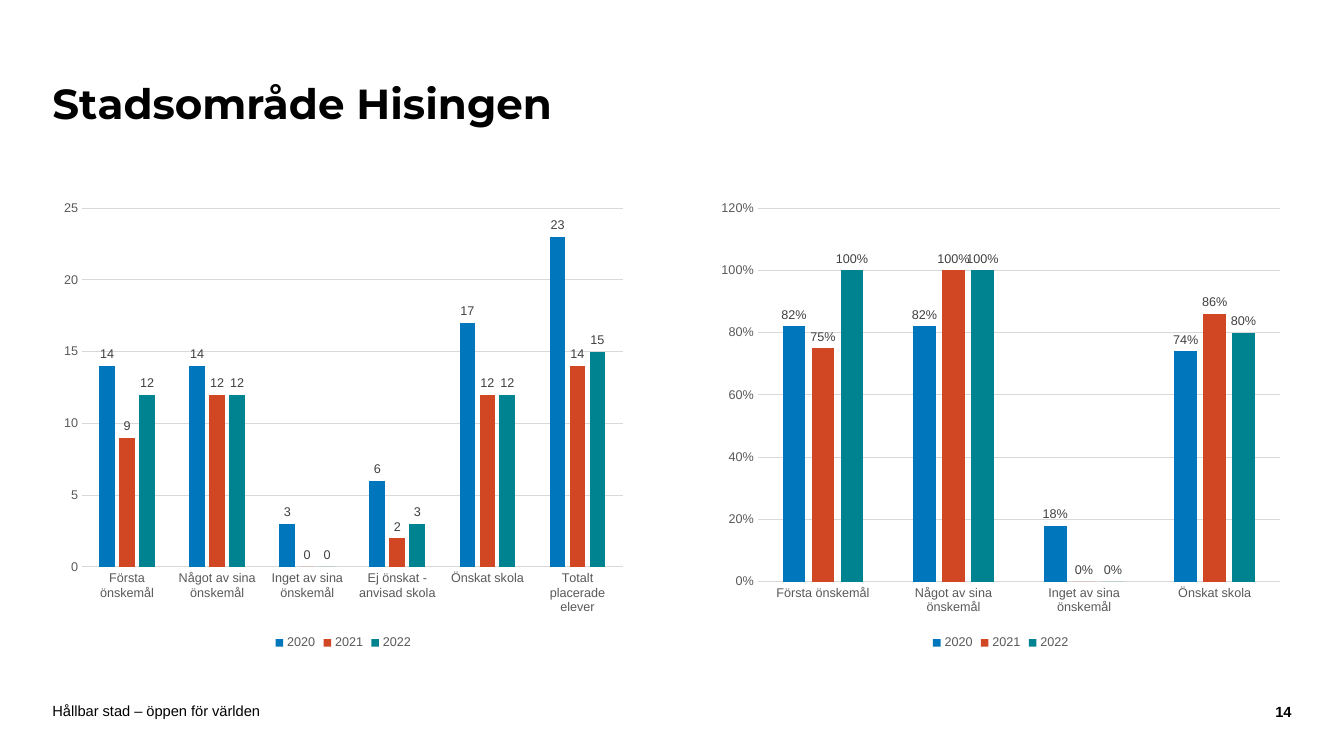
from dataclasses import dataclass

from pptx import Presentation
from pptx import util as u
from pptx.chart import data as chart_data
from pptx.dml import color
from pptx.enum import chart as charts, text


@dataclass(frozen=True)
class Theme:
    heading: str = "Montserrat"
    body: str = "Arial"
    ink: str = "000000"
    muted: str = "595959"
    label: str = "404040"
    rule: str = "D9D9D9"
    series: tuple = ("0077BC", "D24723", "008391")
    title_size: float = 30
    footer_size: float = 10.5
    chart_size: float = 10
    small_size: float = 9
    line_width: float = 0.75


THEME = Theme()
YEARS = ("2020", "2021", "2022")
MARGIN = 0.52
CONTENT_WIDTH = 12.29
CHART_WIDTH = 5.77
CHART_TOP, CHART_HEIGHT = 1.9, 4.59

PLACEMENT_COUNTS = {
    "Första önskemål": (14, 9, 12),
    "Något av sina önskemål": (14, 12, 12),
    "Inget av sina önskemål": (3, 0, 0),
    "Ej önskat - anvisad skola": (6, 2, 3),
    "Önskat skola": (17, 12, 12),
    "Totalt placerade elever": (23, 14, 15),
}
PLACEMENT_SHARES = {
    "Första önskemål": (0.82, 0.75, 1),
    "Något av sina önskemål": (0.82, 1, 1),
    "Inget av sina önskemål": (0.18, 0, 0),
    "Önskat skola": (0.74, 0.86, 0.8),
}


def rgb(value):
    return color.RGBColor.from_string(value)


def style_font(font, size, hue, name=THEME.body, bold=False):
    font.size = u.Pt(size)
    font.color.rgb = rgb(hue)
    font.name = name
    font.bold = bold


def style_line(line):
    line.color.rgb = rgb(THEME.rule)
    line.width = u.Pt(THEME.line_width)


def set_frame(frame, vertical_inset):
    frame.word_wrap = True
    frame.auto_size = text.MSO_AUTO_SIZE.NONE
    frame.vertical_anchor = text.MSO_ANCHOR.MIDDLE
    frame.margin_left = frame.margin_right = 0
    frame.margin_top = frame.margin_bottom = u.Inches(vertical_inset)


def add_title(slide, box, wording):
    title = slide.shapes.title
    title.left, title.top, title.width, title.height = map(u.Inches, box)
    set_frame(title.text_frame, 0.05)
    paragraph = title.text_frame.paragraphs[0]
    paragraph.text = wording
    paragraph.alignment = text.PP_ALIGN.LEFT
    paragraph.line_spacing = 0.9
    style_font(paragraph.font, THEME.title_size, THEME.ink, THEME.heading, True)


def add_footer_text(slide, box, wording, alignment, bold=False):
    shape = slide.shapes.add_textbox(*map(u.Inches, box))
    set_frame(shape.text_frame, 0)
    paragraph = shape.text_frame.paragraphs[0]
    paragraph.text = wording
    paragraph.alignment = alignment
    style_font(paragraph.font, THEME.footer_size, THEME.ink, bold=bold)


def add_footer(slide, box):
    left, top, width, height = box
    number_width = 0.64
    add_footer_text(slide, (left, top, 9.45, height),
                    "Hållbar stad – öppen för världen", text.PP_ALIGN.LEFT)
    add_footer_text(slide, (left + width - number_width, top + 0.01, number_width, height),
                    "14", text.PP_ALIGN.RIGHT, True)


def style_axes(chart, maximum, step, number_format):
    for axis in (chart.category_axis, chart.value_axis):
        axis.major_tick_mark = axis.minor_tick_mark = charts.XL_TICK_MARK.NONE
        style_font(axis.tick_labels.font, THEME.small_size, THEME.muted)
    style_line(chart.category_axis.format.line)
    value_axis = chart.value_axis
    value_axis.format.line.fill.background()
    value_axis.minimum_scale = 0
    value_axis.maximum_scale = maximum
    value_axis.major_unit = step
    value_axis.has_major_gridlines = True
    style_line(value_axis.major_gridlines.format.line)
    value_axis.tick_labels.number_format = number_format
    value_axis.tick_labels.number_format_is_linked = False


def style_series(series, hue, number_format):
    series.format.fill.solid()
    series.format.fill.fore_color.rgb = rgb(hue)
    series.invert_if_negative = False
    labels = series.data_labels
    labels.show_value = True
    labels.position = charts.XL_LABEL_POSITION.OUTSIDE_END
    labels.number_format = number_format
    labels.number_format_is_linked = False
    style_font(labels.font, THEME.small_size, THEME.label)


def add_column_chart(slide, box, rows, maximum, step, number_format):
    data = chart_data.CategoryChartData(number_format=number_format)
    data.categories = list(rows)
    for year, values in zip(YEARS, zip(*rows.values())):
        data.add_series(year, values)
    chart = slide.shapes.add_chart(
        charts.XL_CHART_TYPE.COLUMN_CLUSTERED, *map(u.Inches, box), data).chart
    style_font(chart.font, THEME.chart_size, THEME.ink)
    chart.has_title = False
    chart.has_legend = True
    chart.legend.position = charts.XL_LEGEND_POSITION.BOTTOM
    chart.legend.include_in_layout = False
    style_font(chart.legend.font, THEME.small_size, THEME.muted)
    style_axes(chart, maximum, step, number_format)
    plot = chart.plots[0]
    plot.gap_width = 219
    plot.overlap = -27
    plot.vary_by_categories = False
    for series, hue in zip(plot.series, THEME.series):
        style_series(series, hue, number_format)


def main():
    presentation = Presentation()
    presentation.slide_width = u.Inches(13.33)
    presentation.slide_height = u.Inches(7.5)
    slide = presentation.slides.add_slide(presentation.slide_layouts[5])
    add_title(slide, (MARGIN, 0.42, 10.03, 1.26), "Stadsområde Hisingen")
    right_chart = MARGIN + CONTENT_WIDTH - CHART_WIDTH
    add_column_chart(slide, (MARGIN, CHART_TOP, CHART_WIDTH, CHART_HEIGHT),
                     PLACEMENT_COUNTS, 25, 5, "General")
    add_column_chart(slide, (right_chart, CHART_TOP, CHART_WIDTH, CHART_HEIGHT),
                     PLACEMENT_SHARES, 1.2, 0.2, "0%")
    add_footer(slide, (MARGIN, 6.97, CONTENT_WIDTH, 0.16))
    presentation.save("out.pptx")


if __name__ == "__main__":
    main()
